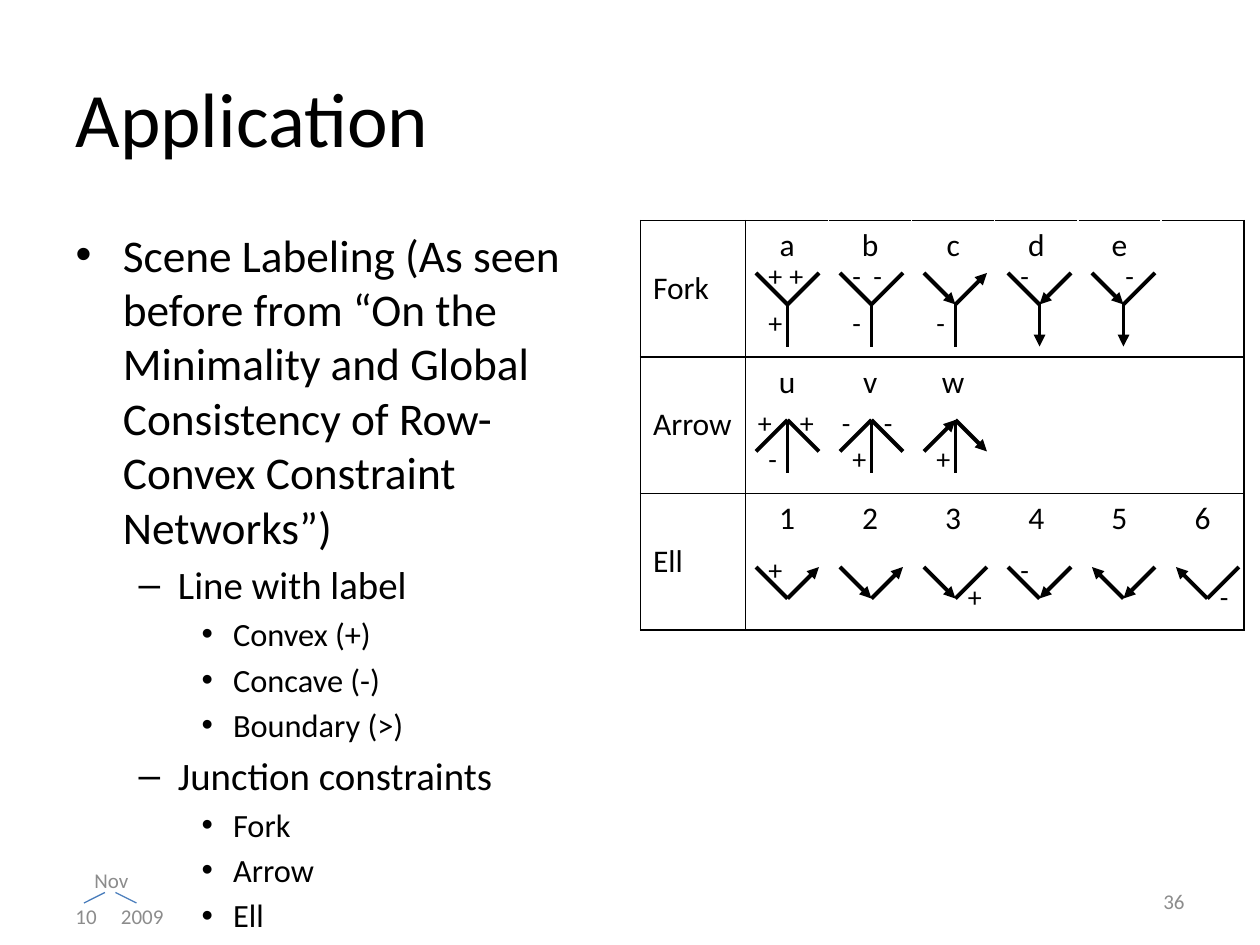
from lxml.etree import SubElement
from pptx import Presentation
from pptx.dml.color import RGBColor
from pptx.enum.shapes import MSO_CONNECTOR as Connector
from pptx.enum.text import MSO_ANCHOR as Anchor, MSO_AUTO_SIZE as AutoSize, PP_ALIGN as Align
from pptx.oxml.ns import qn
from pptx.util import Pt

COLOURS = {"ink": "000000", "muted": "8C8C8C", "branch": "4B7EBC"}
OUTLINE = [
    (0, "Scene Labeling (As seen before from “On the Minimality and Global "
        "Consistency of Row-Convex Constraint Networks”)"),
    (1, "Line with label"),
    (2, "Convex (+)"),
    (2, "Concave (-)"),
    (2, "Boundary (>)"),
    (1, "Junction constraints"),
    (2, "Fork"),
    (2, "Arrow"),
    (2, "Ell"),
]
LEVEL_SIZES = [25.9, 22.2, 18.5]
LABEL_COLUMNS = 6
FIRST_JUNCTION_X, JUNCTION_PITCH = 450, 48

# Marks per stroke: + and - are labels, > points outward, < points at the junction.
JUNCTIONS = [
    {"name": "Fork", "y": 174,
     "tips": [(-18, -18), (18, -18), (0, 24)],
     "marks_at": [(-18, -30), (-6, -30), (-18, -3)],
     "labelings": {"a": "+++", "b": "---", "c": "<>-", "d": "-<>", "e": "<->"}},
    {"name": "Arrow", "y": 240,
     "tips": [(-18, 18), (18, 18), (0, 30)],
     "marks_at": [(-24, -12), (0, -12), (-18, 9)],
     "labelings": {"u": "++-", "v": "--+", "w": "<>+"}},
    {"name": "Ell", "y": 342,
     "tips": [(-18, -18), (18, -18)],
     "marks_at": [(-18, -30), (0, -14.4)],
     "labelings": {"1": "+>", "2": "<>", "3": "<+", "4": "-<", "5": "><", "6": ">-"}},
]


def apply_format(target, values):
    for attribute, value in values.items():
        setattr(target, attribute, value)


def write(paragraph, wording, size, colour="ink", **layout):
    apply_format(paragraph, layout)
    run = paragraph.add_run()
    run.text = wording
    apply_format(run.font, {"name": "Calibri", "size": Pt(size)})
    run.font.color.rgb = RGBColor.from_string(COLOURS[colour])


def place(shape, left, top, width, height):
    apply_format(shape, {"left": Pt(left), "top": Pt(top),
                         "width": Pt(width), "height": Pt(height)})


def add_text_frame(slide, left, top, width, height, anchor=Anchor.TOP):
    frame = slide.shapes.add_textbox(Pt(left), Pt(top), Pt(width), Pt(height)).text_frame
    apply_format(frame, {"word_wrap": True, "vertical_anchor": anchor})
    return frame


def add_stroke(shapes, start, end, colour, width, mark=""):
    stroke = shapes.add_connector(Connector.STRAIGHT, *map(Pt, (*start, *end)))
    stroke.line.color.rgb = RGBColor.from_string(COLOURS[colour])
    stroke.line.width = Pt(width)
    arrow_end = {"<": "a:headEnd", ">": "a:tailEnd"}.get(mark)
    if arrow_end:
        SubElement(stroke.line._get_or_add_ln(), qn(arrow_end), type="triangle")
    SubElement(stroke._element.spPr, qn("a:effectLst"))


def fill_title(slide):
    title = slide.shapes.title
    place(title, 36, 21.6, 648, 90)
    title.text_frame.vertical_anchor = Anchor.MIDDLE
    write(title.text_frame.paragraphs[0], "Application", 44, alignment=Align.LEFT)


def fill_outline(slide):
    body = slide.placeholders[1]
    place(body, 36, 126, 318, 356.4)
    frame = body.text_frame
    frame.auto_size = AutoSize.NONE
    for index, (level, wording) in enumerate(OUTLINE):
        paragraph = frame.add_paragraph() if index else frame.paragraphs[0]
        write(paragraph, wording, LEVEL_SIZES[level], level=level)
    frame.paragraphs[0].space_before = Pt(0)


def border_cell(cell, sides):
    properties = cell._tc.get_or_add_tcPr()
    for side in sides:
        edge = SubElement(properties, qn(f"a:ln{side}"), w=str(Pt(1)))
        fill = SubElement(edge, qn("a:solidFill"))
        SubElement(fill, qn("a:srgbClr"), val=COLOURS["ink"])
    cell.fill.background()


def add_junction_table(slide):
    table = slide.shapes.add_table(len(JUNCTIONS), LABEL_COLUMNS + 1,
                                   Pt(366), Pt(126), Pt(345), Pt(234)).table
    apply_format(table, {"first_row": False, "horz_banding": False})
    for index, column in enumerate(table.columns):
        column.width = Pt(47.5 if index else 60)
    for row, junction in enumerate(JUNCTIONS):
        table.rows[row].height = Pt(78)
        for column in range(LABEL_COLUMNS + 1):
            sides = {0: "LRTB", 1: "LTB", LABEL_COLUMNS: "RTB"}.get(column, "TB")
            border_cell(table.cell(row, column), sides)
        name_cell = table.cell(row, 0)
        name_cell.vertical_anchor = Anchor.MIDDLE
        write(name_cell.text_frame.paragraphs[0], junction["name"], 18)
        for column, letter in enumerate(junction["labelings"], 1):
            heading = table.cell(row, column).text_frame.paragraphs[0]
            write(heading, letter, 18, alignment=Align.CENTER)


def draw_labeling(slide, junction, column, marks):
    x, y = FIRST_JUNCTION_X + column * JUNCTION_PITCH, junction["y"]
    strokes = slide.shapes.add_group_shape().shapes
    for (tip_x, tip_y), (mark_x, mark_y), mark in zip(
            junction["tips"], junction["marks_at"], marks):
        add_stroke(strokes, (x, y), (x + tip_x, y + tip_y), "ink", 2.25, mark)
        if mark in "+-":
            label = add_text_frame(slide, x + mark_x, y + mark_y, 18, 26.6)
            write(label.paragraphs[0], mark, 16)


def add_date(slide):
    date = add_text_frame(slide, 36, 499, 168, 28.8, Anchor.MIDDLE)
    month, day_and_year = date.paragraphs[0], date.add_paragraph()
    month._p.get_or_add_pPr().set("marL", str(Pt(10.8)))
    tabs = SubElement(day_and_year._p.get_or_add_pPr(), qn("a:tabLst"))
    SubElement(tabs, qn("a:tab"), pos=str(Pt(26)), algn="l")
    write(month, "Nov", 12, "muted", space_after=Pt(6))
    write(day_and_year, "10\t2009", 12, "muted", space_after=Pt(6))
    add_stroke(slide.shapes, (48, 516), (60, 510), "branch", 0.75)
    add_stroke(slide.shapes, (66, 510), (78, 516), "branch", 0.75)


def add_page_number(slide):
    number = add_text_frame(slide, 516, 500.4, 168, 28.8, Anchor.MIDDLE)
    write(number.paragraphs[0], "36", 12, "muted", alignment=Align.RIGHT)


def main():
    deck = Presentation()
    apply_format(deck, {"slide_width": Pt(720), "slide_height": Pt(540)})
    slide = deck.slides.add_slide(deck.slide_layouts[1])
    add_date(slide)
    fill_title(slide)
    fill_outline(slide)
    add_junction_table(slide)
    for junction in JUNCTIONS:
        for column, marks in enumerate(junction["labelings"].values()):
            draw_labeling(slide, junction, column, marks)
    add_page_number(slide)
    deck.save("out.pptx")


if __name__ == "__main__":
    main()
